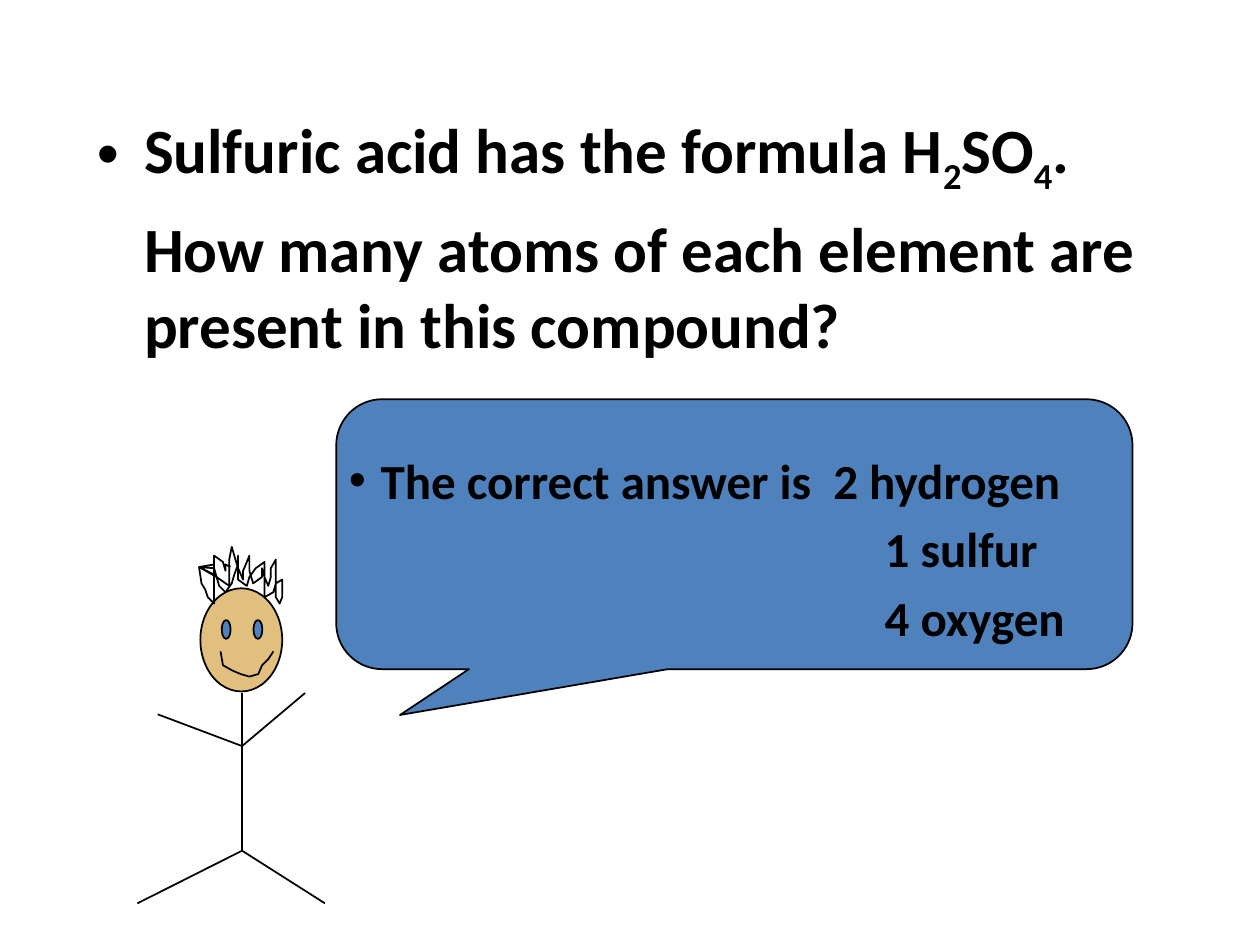
from lxml import etree
from pptx import Presentation
from pptx.dml.color import RGBColor
from pptx.enum.shapes import MSO_CONNECTOR, MSO_SHAPE
from pptx.enum.text import MSO_ANCHOR, MSO_AUTO_SIZE
from pptx.oxml.ns import qn
from pptx.util import Cm, Pt

CALLOUT = MSO_SHAPE.ROUNDED_RECTANGULAR_CALLOUT
OVAL = MSO_SHAPE.OVAL
STRAIGHT = MSO_CONNECTOR.STRAIGHT
FONT = "Calibri"
COLORS = {"ink": "000000", "blue": "4F81BD", "skin": "E1BF7E"}

# Paragraphs: runs (text, is subscript), size, level, left and first indent in cm,
# space before in points, bullet
PARAGRAPHS = [
    ([("Sulfuric acid has the formula H", False), ("2", True), ("SO", False),
      ("4", True), (".", False)], 36, 0, 0.95, -0.95, 0, True),
    ([("How many atoms of each element are present in this compound?", False)],
     36, 0, 0.95, 0, 7.2, False),
    ([("The correct answer is  2 hydrogen", False)], 28, 4, 5.72, -0.64, 51, True),
    ([("1 sulfur", False)], 28, 4, 15.88, 0, 5.6, False),
    ([("4 oxygen", False)], 28, 4, 15.88, 0, 5.6, False),
]

# Boxes (left, top, width, height) and joints (x, y) in cm
BODY_BOX = (1.7, 2.11, 23.06, 11.63)
CALLOUT_BOX = (6.78, 8.05, 16.05, 5.44)
CALLOUT_ADJUST = (-0.42, 0.67, 0.17)
HEAD = (4.04, 11.86, 1.65, 2.08)
EYES = [(4.47, 12.5, 0.18, 0.38), (5.11, 12.5, 0.18, 0.38)]
NECK, SHOULDER, HIP = (4.88, 13.97), (4.88, 15.04), (4.88, 17.15)
LIMBS = [
    (NECK, HIP),
    (HIP, (2.77, 18.21)),
    (SHOULDER, (3.18, 14.4)),
    (SHOULDER, (6.15, 13.97)),
    (HIP, (6.55, 18.21)),
]

# Hand-drawn strokes, in hundredths of an inch
STROKE_UNIT = Cm(2.54) / 100
HAIR = [
    (158, 450), (160, 463), (163, 468), (165, 474), (170, 479), (170, 474),
    (170, 468), (170, 463), (170, 456), (170, 448), (158, 450), (170, 451),
    (172, 458), (174, 465), (179, 470), (184, 463), (186, 456), (189, 448),
    (189, 441), (189, 446), (189, 453), (189, 460), (196, 465), (198, 458),
    (203, 451), (210, 446), (210, 453), (210, 460), (210, 468), (210, 474),
    (217, 470), (219, 463), (224, 460), (224, 468), (224, 474), (222, 479),
    (219, 474), (219, 465), (219, 458), (219, 451), (219, 444), (215, 451),
    (215, 458), (213, 465), (210, 458), (208, 451), (208, 458), (201, 463),
    (198, 453), (198, 448), (198, 441), (196, 446), (193, 453), (193, 460),
    (189, 451), (186, 441), (184, 434), (182, 444), (182, 451), (182, 458),
    (182, 465), (172, 458), (158, 450), (170, 456), (170, 460), (170, 456),
    (170, 448), (170, 441), (177, 446), (179, 453), (179, 448), (183, 450),
]
SMILE = [(175, 517), (177, 528), (184, 532), (191, 535), (198, 537),
         (205, 535), (208, 528), (213, 523), (217, 517)]


def rgb(name):
    return RGBColor.from_string(COLORS[name])


def outline(s):
    s.line.color.rgb = rgb("ink")
    s.line.width = Pt(1)


def add_filled(shapes, kind, box, color):
    s = shapes.add_shape(kind, *map(Cm, box))
    s.shadow.inherit = False
    s.fill.solid()
    s.fill.fore_color.rgb = rgb(color)
    outline(s)
    return s


def add_limb(shapes, start, end):
    s = shapes.add_connector(STRAIGHT, *map(Cm, start + end))
    outline(s)
    etree.SubElement(s._element.spPr, qn("a:effectLst"))


def add_stroke(shapes, points):
    builder = shapes.build_freeform(*points[0], scale=STROKE_UNIT)
    builder.add_line_segments(points[1:], close=False)
    s = builder.convert_to_shape()
    s.shadow.inherit = False
    s.fill.background()
    outline(s)


def write_paragraph(p, runs, size, level, left, first, before, bullet):
    p.level = level
    pPr = p._p.get_or_add_pPr()
    pPr.set("marL", str(Cm(left)))
    pPr.set("indent", str(Cm(first)))
    if bullet:
        etree.SubElement(pPr, qn("a:buFont")).set("typeface", "Arial")
        etree.SubElement(pPr, qn("a:buChar")).set("char", "•")
    else:
        etree.SubElement(pPr, qn("a:buNone"))
    p.space_before = Pt(before)
    for text, subscript in runs:
        r = p.add_run()
        r.text = text
        r.font.name, r.font.size, r.font.bold = FONT, Pt(size), True
        r.font.color.rgb = rgb("ink")
        if subscript:
            r._r.get_or_add_rPr().set("baseline", "-25000")


def main():
    prs = Presentation()
    prs.slide_width, prs.slide_height = Cm(25.4), Cm(19.05)
    slide = prs.slides.add_slide(prs.slide_layouts[1])
    shapes = slide.shapes
    shapes.title._element.getparent().remove(shapes.title._element)

    # Speech bubble, behind the text
    bubble = add_filled(shapes, CALLOUT, CALLOUT_BOX, "blue")
    for i, value in enumerate(CALLOUT_ADJUST):
        bubble.adjustments[i] = value

    # Question and answer
    body = slide.placeholders[1]
    body.left, body.top, body.width, body.height = map(Cm, BODY_BOX)
    shapes._spTree.append(body._element)
    tf = body.text_frame
    tf.auto_size = MSO_AUTO_SIZE.NONE
    tf.vertical_anchor = MSO_ANCHOR.TOP
    for i, item in enumerate(PARAGRAPHS):
        write_paragraph(tf.add_paragraph() if i else tf.paragraphs[0], *item)

    # Stick figure
    figure = shapes.add_group_shape().shapes
    add_filled(figure, OVAL, HEAD, "skin")
    for start, end in LIMBS:
        add_limb(figure, start, end)
    add_stroke(figure, HAIR)
    for eye in EYES:
        add_filled(figure, OVAL, eye, "blue")
    add_stroke(figure, SMILE)

    prs.save("out.pptx")


if __name__ == "__main__":
    main()
